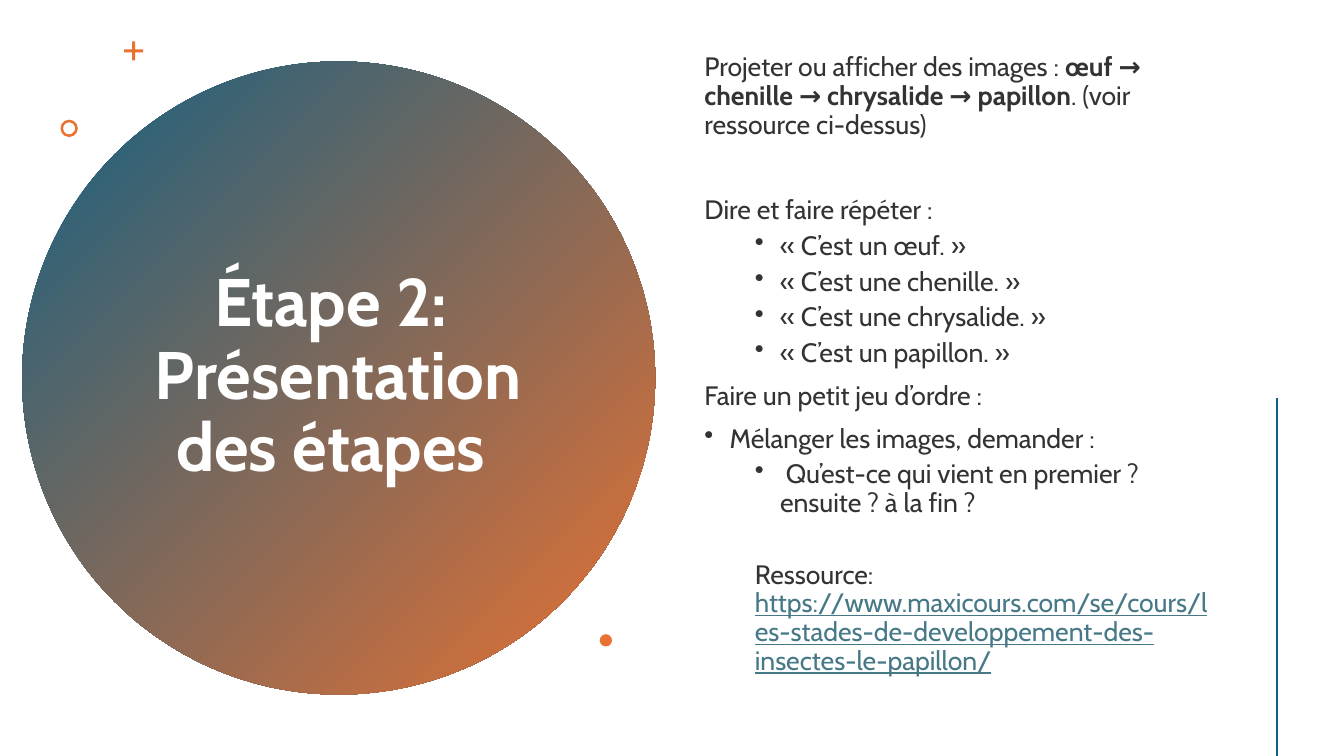
"""Build the slide presenting the stages of the butterfly."""
from lxml import etree
from pptx import Presentation
from pptx.dml.color import RGBColor
from pptx.enum import shapes, text
from pptx.oxml import ns
from pptx.util import Pt

TEAL = RGBColor(0x15, 0x60, 0x82)
ORANGE = RGBColor(0xE9, 0x71, 0x32)
WHITE = RGBColor(0xFF, 0xFF, 0xFF)
INK = RGBColor(0x33, 0x33, 0x33)
LINK = RGBColor(0x46, 0x78, 0x86)
FONT = "Cabin"

TITLE = "Étape 2: \vPrésentation des étapes "
PLAIN, BOLD, URL = {"color": INK}, {"color": INK, "bold": True}, {"color": LINK, "underline": True}

STYLES = {
    "plain": {"level": 0, "left": 0, "hang": 0, "before": 10},
    "bullet": {"level": 0, "left": 18, "hang": 18, "before": 10},
    "sub": {"level": 1, "left": 54, "hang": 18, "before": 5},
    "source": {"level": 1, "left": 36, "hang": 0, "before": 5},
}
BODY = [
    ("plain", 0, [("Projeter ou afficher des images : ", PLAIN),
                  ("œuf → chenille → chrysalide → papillon", BOLD),
                  (". (voir ressource ci-dessus)", PLAIN)]),
    ("plain", 40.6, [("Dire et faire répéter :", PLAIN)]),
    ("sub", None, [("« C’est un œuf. »", PLAIN)]),
    ("sub", None, [("« C’est une chenille. »", PLAIN)]),
    ("sub", None, [("« C’est une chrysalide. »", PLAIN)]),
    ("sub", None, [("« C’est un papillon. »", PLAIN)]),
    ("plain", None, [("Faire un petit jeu d’ordre :", PLAIN)]),
    ("bullet", None, [("Mélanger les images, demander :", PLAIN)]),
    ("sub", None, [(" Qu’est-ce qui vient en premier ? ensuite ? à la fin ?", PLAIN)]),
    ("source", 30.6, [("Ressource: ", PLAIN),
                      ("https://www.maxicours.com/se/cours/les-stades-de-developpement-des-insectes-le-papillon/", URL)]),
]
ORNAMENTS = [
    (shapes.MSO_SHAPE.CROSS, 88.6, 29.5, 13.7, 0.42),
    (shapes.MSO_SHAPE.DONUT, 43.2, 85.5, 12.4, 0.15),
    (shapes.MSO_SHAPE.OVAL, 428.4, 453, 8.8, None),
]


def add_round(s, kind, left, top, size):
    sp = s.shapes.add_shape(kind, Pt(left), Pt(top), Pt(size), Pt(size))
    sp.shadow.inherit = False
    sp.line.fill.background()
    return sp


def add_run(p, words, size, look):
    r = p.add_run()
    r.text = words
    format_font(r.font, size, look)


def format_font(font, size, look):
    font.name, font.size = FONT, Pt(size)
    for key, value in look.items():
        if key == "color":
            font.color.rgb = value
        else:
            setattr(font, key, value)


def add_disc(s):
    disc = add_round(s, shapes.MSO_SHAPE.OVAL, 15.8, 43.9, 452.2)
    disc.fill.gradient()
    disc.fill.gradient_angle = 315
    for stop, color in zip(disc.fill.gradient_stops, (TEAL, ORANGE)):
        stop.color.rgb = color


def place_title(s):
    title = s.shapes.title
    title.element.getparent().append(title.element)
    for key, value in {"left": 97.9, "top": 101.5, "width": 287.3, "height": 336.2}.items():
        setattr(title, key, Pt(value))
    tf = title.text_frame
    tf.word_wrap, tf.auto_size = True, text.MSO_AUTO_SIZE.NONE
    tf.vertical_anchor = text.MSO_ANCHOR.MIDDLE
    p = tf.paragraphs[0]
    p.text = TITLE
    p.alignment, p.line_spacing = text.PP_ALIGN.CENTER, 0.9
    for r in p.runs:
        format_font(r.font, 48, {"color": WHITE, "bold": True})


def add_body(s):
    tf = s.shapes.add_textbox(Pt(496.1), Pt(38.4), Pt(375.8), Pt(459.4)).text_frame
    tf.word_wrap, tf.margin_top = True, 0
    for i, (name, before, runs) in enumerate(BODY):
        style = STYLES[name]
        p = tf.add_paragraph() if i else tf.paragraphs[0]
        p.level, p.line_spacing = style["level"], 0.9
        p.space_before = Pt(style["before"] if before is None else before)
        pPr = p._p.get_or_add_pPr()
        pPr.set("marL", str(Pt(style["left"])))
        pPr.set("indent", str(-Pt(style["hang"])))
        if style["hang"]:
            etree.SubElement(pPr, ns.qn("a:buChar")).set("char", "•")
        for words, look in runs:
            add_run(p, words, 19, look)


def add_ornaments(s):
    for kind, left, top, size, adjust in ORNAMENTS:
        sp = add_round(s, kind, left, top, size)
        sp.fill.solid()
        sp.fill.fore_color.rgb = ORANGE
        if adjust is not None:
            sp.adjustments[0] = adjust


def add_rule(s):
    rule = s.shapes.add_connector(shapes.MSO_CONNECTOR.STRAIGHT, Pt(912.2), Pt(284.2), Pt(912.2), Pt(540))
    rule.line.color.rgb, rule.line.width = TEAL, Pt(2)
    etree.SubElement(rule.element.spPr, ns.qn("a:effectLst"))


def main():
    prs = Presentation()
    prs.slide_width, prs.slide_height = Pt(960), Pt(540)
    s = prs.slides.add_slide(prs.slide_layouts[5])
    for draw in (add_disc, place_title, add_ornaments, add_body, add_rule):
        draw(s)
    prs.save("out.pptx")


if __name__ == "__main__":
    main()
